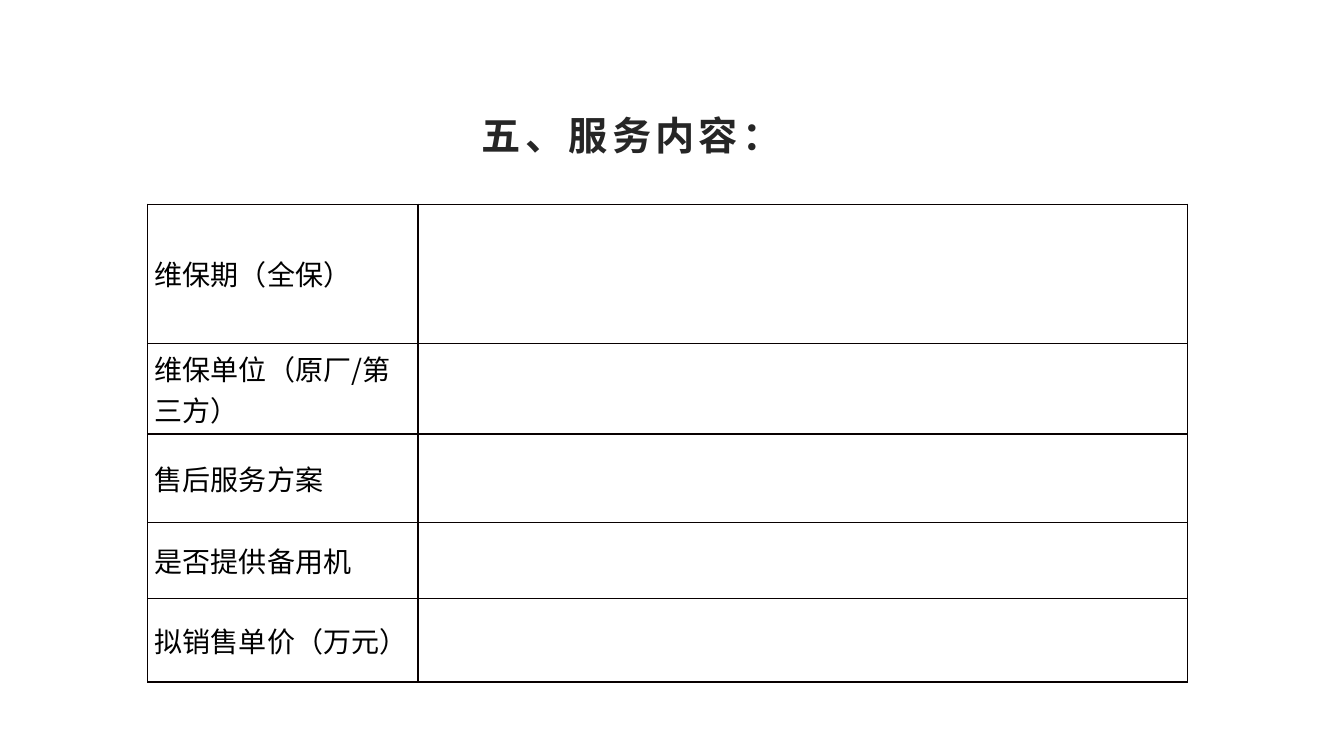
from pptx import Presentation
from pptx import util as u
from pptx.dml.color import RGBColor
from pptx.enum import text
from pptx.oxml import parse_xml
from pptx.oxml.ns import nsdecls

WIDE, HIGH = 13.33, 7.5
LEFT = 0.11  # share of the slide's width
INK = {"title": "262626", "body": "000000", "rule": "080000"}
LABELS = ["维保期（全保）", "维保单位（原厂/第三方）", "售后服务方案",
          "是否提供备用机", "拟销售单价（万元）"]
COLS = [2.68, 7.63]
ROWS = [1.38, 0.9, 0.88, 0.75, 0.83]


class Page:
    """Holds the style and the slide; places are shares of the slide's size."""

    def __init__(self, deck):
        self.wide, self.high = deck.slide_width, deck.slide_height
        self.slide = deck.slides.add_slide(deck.slide_layouts[6])

    def place(self, x, y, w, h):
        return (round(x * self.wide), round(y * self.high),
                round(w * self.wide), round(h * self.high))

    def style(self, para, face, size, ink, bold=False):
        font = para.font
        font.name, font.size, font.bold = face, u.Pt(size), bold
        font.color.rgb = RGBColor.from_string(INK[ink])

    def title(self, words, *area):
        frame = self.slide.shapes.add_textbox(*self.place(*area)).text_frame
        frame.word_wrap = True
        frame.auto_size = text.MSO_AUTO_SIZE.SHAPE_TO_FIT_TEXT
        para = frame.paragraphs[0]
        run = para.add_run()
        run.text = words
        run._r.get_or_add_rPr().set("spc", "300")
        para.alignment = text.PP_ALIGN.CENTER
        para.line_spacing = 1.5
        para.space_before, para.space_after = u.Pt(6), u.Pt(10)
        self.style(para, "Arial", 28, "title", True)

    def border(self, cell):
        props = cell._tc.get_or_add_tcPr()
        for at, side in enumerate(("lnL", "lnR", "lnT", "lnB")):
            props.insert(at, parse_xml(
                f'<a:{side} {nsdecls("a")} w="12700"><a:solidFill>'
                f'<a:srgbClr val="{INK["rule"]}"/></a:solidFill></a:{side}>'))

    def table(self, labels, cols, rows, x, y):
        area = self.place(x, y, sum(cols) / WIDE, sum(rows) / HIGH)
        grid = self.slide.shapes.add_table(len(rows), len(cols), *area).table
        grid.first_row = grid.horz_banding = False
        for col, w in zip(grid.columns, cols):
            col.width = u.Inches(w)
        for row, h, label in zip(grid.rows, rows, labels):
            row.height = u.Inches(h)
            row.cells[0].text = label
            for cell in row.cells:
                cell.fill.background()
                cell.vertical_anchor = text.MSO_ANCHOR.MIDDLE
                cell.margin_left = cell.margin_right = u.Inches(0.07)
                cell.margin_top = cell.margin_bottom = 0
                self.style(cell.text_frame.paragraphs[0],
                           "Noto Sans CJK SC", 20, "body")
                self.border(cell)


def main():
    deck = Presentation()
    deck.slide_width, deck.slide_height = u.Inches(WIDE), u.Inches(HIGH)
    page = Page(deck)
    page.title("五、服务内容：", LEFT, 0.11, 0.72, 0.11)
    page.table(LABELS, COLS, ROWS, LEFT, 0.27)
    deck.save("out.pptx")


if __name__ == "__main__":
    main()
